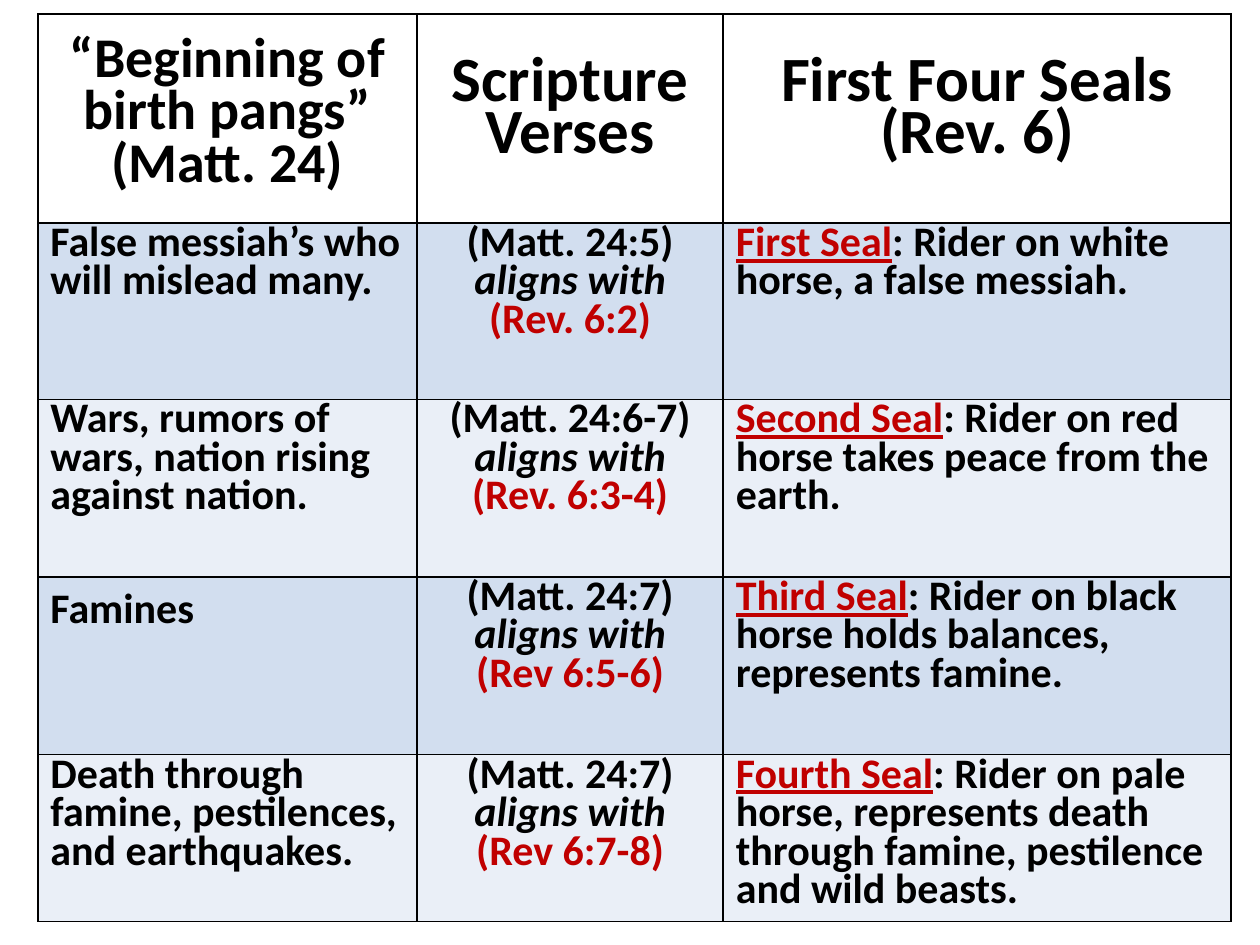
from lxml.etree import SubElement as add_node
from pptx import Presentation
from pptx.dml.color import RGBColor as Rgb
from pptx.enum.text import MSO_ANCHOR as Anchor, PP_ALIGN as Align
from pptx.oxml.ns import qn
from pptx.util import Inches, Pt

COLORS = {"ink": "000000", "seal": "C00000", "dark": "D2DEEF", "light": "EAEFF7"}
COLUMNS = [3.01, 2.43, 4.03]
ROWS = [1.66, 1.4, 1.41, 1.41, 1.07]
HEADERS = [
    (32, ["“Beginning of birth pangs”", "(Matt. 24)"]),
    (36, ["Scripture Verses"]),
    (36, ["First Four Seals", "(Rev. 6)"]),
]
SEALS = [
    ("False messiah’s who will mislead many.", "(Matt. 24:5)", "(Rev. 6:2)",
     "First Seal", ": Rider on white horse, a false messiah."),
    ("Wars, rumors of wars, nation rising against nation.", "(Matt. 24:6-7)", "(Rev. 6:3-4)",
     "Second Seal", ": Rider on red horse takes peace from the earth."),
    ("Famines", "(Matt. 24:7)", "(Rev 6:5-6)",
     "Third Seal", ": Rider on black horse holds balances, represents famine."),
    ("Death through famine, pestilences, and earthquakes.", "(Matt. 24:7)", "(Rev 6:7-8)",
     "Fourth Seal", ": Rider on pale horse, represents death through famine, pestilence and wild beasts."),
]


def add_span(para, text, color="ink", **formats):
    """Add one run of bold text with the given font values."""
    span = para.add_run()
    span.text = text
    values = {"name": "Calibri", "bold": True, "size": Pt(24), **formats}
    for name, value in values.items():
        setattr(span.font, name, value)
    span.font.color.rgb = Rgb.from_string(COLORS[color])


def write_cell(cell, paras, align=Align.LEFT, spacing=Pt(22)):
    """Fill a cell with paragraphs, each a list of (text, formats) spans."""
    frame = cell.text_frame
    for index, spans in enumerate(paras):
        para = frame.add_paragraph() if index else frame.paragraphs[0]
        for name, value in {"alignment": align, "line_spacing": spacing}.items():
            setattr(para, name, value)
        for text, formats in spans:
            add_span(para, text, **formats)


def style_cell(cell, fill=None):
    """Give a cell thin black borders and a fill."""
    props = cell._tc.get_or_add_tcPr()
    for side in ("a:lnL", "a:lnR", "a:lnT", "a:lnB"):
        line = add_node(props, qn(side), w=str(Pt(1)))
        solid = add_node(line, qn("a:solidFill"))
        add_node(solid, qn("a:srgbClr"), val=COLORS["ink"])
    if fill:
        cell.fill.solid()
        cell.fill.fore_color.rgb = Rgb.from_string(COLORS[fill])
    else:
        cell.fill.background()


def add_grid(page):
    """Add the empty table with its column widths and row heights."""
    table = page.shapes.add_table(len(ROWS), len(COLUMNS), Inches(0.3), Inches(0.11),
                                  Inches(sum(COLUMNS)), Inches(7.2)).table
    table.horz_banding = False
    for column, width in zip(table.columns, COLUMNS):
        column.width = Inches(width)
    for row, height in zip(table.rows, ROWS):
        row.height = Inches(height)
    return table


def write_headers(table):
    """Write the heading row."""
    for cell, (size, lines) in zip(table.rows[0].cells, HEADERS):
        style_cell(cell)
        cell.vertical_anchor = Anchor.MIDDLE
        write_cell(cell, [[(line, {"size": Pt(size)})] for line in lines], Align.CENTER, Pt(30))


def write_seal(table, number, sign, matthew, revelation, seal, meaning):
    """Write the row that aligns one sign with one seal."""
    cells = list(table.rows[number].cells)
    for cell in cells:
        style_cell(cell, "dark" if number % 2 else "light")
    write_cell(cells[0], [[(sign, {})]], spacing=1.0 if sign == "Famines" else Pt(22))
    write_cell(cells[1], [[(matthew, {})], [("aligns with", {"italic": True})],
                          [(revelation, {"color": "seal"})]], Align.CENTER)
    write_cell(cells[2], [[(seal, {"color": "seal", "underline": True}), (meaning, {})]])


def main():
    """Build the slide and save it."""
    deck = Presentation()
    deck.slide_width, deck.slide_height = Inches(10), Inches(7.5)
    page = deck.slides.add_slide(deck.slide_layouts[6])
    table = add_grid(page)
    write_headers(table)
    for number, seal in enumerate(SEALS, 1):
        write_seal(table, number, *seal)
    deck.save("out.pptx")


if __name__ == "__main__":
    main()
